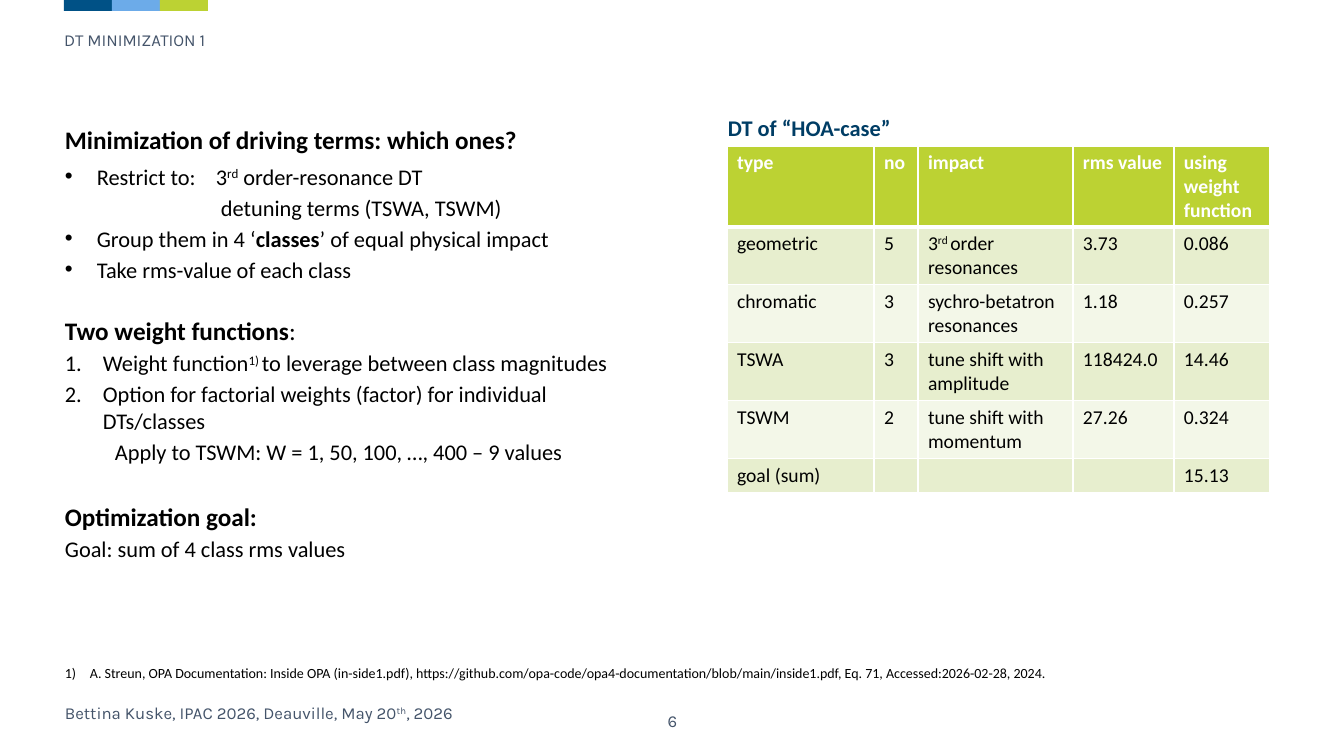
from lxml import etree
from pptx import Presentation
from pptx import util as u
from pptx.dml.color import RGBColor
from pptx.enum import shapes, text
from pptx.oxml.ns import qn

NAVY = RGBColor(0x00, 0x51, 0x86)
SKY = RGBColor(0x6C, 0xAB, 0xE9)
LIME = RGBColor(0xBC, 0xD2, 0x33)
SLATE = RGBColor(0x44, 0x54, 0x6A)
HEADING = RGBColor(0x00, 0x3D, 0x65)
BLACK = RGBColor(0x00, 0x00, 0x00)
WHITE = RGBColor(0xFF, 0xFF, 0xFF)
BAND_DARK = RGBColor(0xE7, 0xEE, 0xCE)
BAND_LIGHT = RGBColor(0xF3, 0xF7, 0xE8)

BULLET = ("buChar", {"char": "•"})
NUMBER = ("buAutoNum", {"type": "arabicPeriod"})
NOTE_NUMBER = ("buAutoNum", {"type": "arabicParenR"})

HEAD = dict(size=18, bold=True, after=3)
LINE = dict(size=16, after=3)
ITEM = dict(LINE, bullet=BULLET, margin=32, hang=32)
STEP = dict(LINE, bullet=NUMBER, margin=38, hang=38)
BODY = [
    ("Minimization of driving terms: which ones?", dict(HEAD, after=6)),
    ("Restrict to:\t3^rd^ order-resonance DT", dict(ITEM, tab=151)),
    ("detuning terms (TSWA, TSWM)", dict(LINE, margin=156)),
    ("Group them in 4 ‘*classes*’ of equal physical impact", ITEM),
    ("Take rms-value of each class", ITEM),
    ("*Two weight functions*:", dict(HEAD, bold=False, before=20)),
    ("Weight function^1) ^to leverage between class magnitudes", STEP),
    ("Option for factorial weights (factor) for individual DTs/classes", STEP),
    ("Apply to TSWM: W = 1, 50, 100, …, 400 – 9 values", dict(LINE, margin=50)),
    ("Optimization goal:", dict(HEAD, before=22.5)),
    ("Goal: sum of 4 class rms values", LINE),
]
CITATION = ("A. Streun, OPA Documentation: Inside OPA (in-side1.pdf), "
            "https://github.com/opa-code/opa4-documentation/blob/main/inside1.pdf, "
            "Eq. 71, Accessed:2026-02-28, 2024.")
TERMS = [
    ["type", "no", "impact", "rms value", "using\nweight function"],
    ["geometric", "5", "3^rd ^order resonances", "3.73", "0.086"],
    ["chromatic", "3", "sychro-betatron resonances", "1.18", "0.257"],
    ["TSWA", "3", "tune shift with amplitude", "118424.0", "14.46"],
    ["TSWM", "2", "tune shift with momentum", "27.26", "0.324"],
    ["goal (sum)", "", "", "", "15.13"],
]


def px(n):
    return u.Emu(round(n * 914400 / 100.8))


def add_xml(parent, tag, index=None, **attrs):
    el = etree.Element(qn("a:" + tag), attrs)
    parent.insert(len(parent) if index is None else index, el)
    return el


def write(p, content, size=16, color=BLACK, face="Calibri", bold=False, align=None,
          before=0, after=0, spacing=None, bullet=None, margin=0, hang=0, tab=None):
    """Fill a paragraph; *...* toggles bold and ^...^ marks a superscript."""
    p.space_before, p.space_after = u.Pt(before), u.Pt(after)
    p.line_spacing, p.alignment = spacing, align
    ppr = p._p.get_or_add_pPr()
    ppr.set("marL", str(px(margin)))
    ppr.set("indent", str(px(-hang)))
    if bullet:
        add_xml(ppr, "buFont", typeface="Arial" if bullet is BULLET else "+mj-lt")
        add_xml(ppr, bullet[0], **bullet[1])
    if tab:
        add_xml(add_xml(ppr, "tabLst"), "tab", pos=str(px(tab)), algn="l")
    for i, part in enumerate(content.split("*")):
        for j, piece in enumerate(part.split("^")):
            if not piece:
                continue
            r = p.add_run()
            r.text = piece
            r.font.size, r.font.name = u.Pt(size), face
            r.font.bold = bold != bool(i % 2)
            r.font.color.rgb = color
            if j % 2:
                r.font._element.set("baseline", "30000")


class Deck:
    def __init__(self, width, height):
        self.prs = Presentation()
        self.prs.slide_width, self.prs.slide_height = px(width), px(height)
        self.s = self.prs.slides.add_slide(self.prs.slide_layouts[5])

    def title(self, content, x, y, w, h, **style):
        sp = self.s.shapes.title
        sp.left, sp.top, sp.width, sp.height = map(px, (x, y, w, h))
        tf = sp.text_frame
        tf.margin_left = tf.margin_top = tf.margin_right = tf.margin_bottom = 0
        tf.vertical_anchor = text.MSO_ANCHOR.TOP
        tf.auto_size = text.MSO_AUTO_SIZE.NONE
        tf.word_wrap = True
        write(tf.paragraphs[0], content, align=text.PP_ALIGN.LEFT, **style)

    def rect(self, x, y, w, h, fill):
        sp = self.s.shapes.add_shape(shapes.MSO_SHAPE.RECTANGLE, *map(px, (x, y, w, h)))
        sp.shadow.inherit = False
        sp.fill.solid()
        sp.fill.fore_color.rgb = fill
        sp.line.fill.background()

    def text(self, lines, x, y, w, h, anchor=text.MSO_ANCHOR.TOP, inset=5):
        """Add a text box; lines holds (content, style) pairs."""
        tf = self.s.shapes.add_textbox(*map(px, (x, y, w, h))).text_frame
        tf.word_wrap = True
        tf.vertical_anchor = anchor
        tf.margin_top = tf.margin_bottom = px(inset)
        for i, (content, style) in enumerate(lines):
            write(tf.add_paragraph() if i else tf.paragraphs[0], content, **style)

    def table(self, rows, x, y, widths, heights):
        frame = self.s.shapes.add_table(len(rows), len(widths), px(x), px(y),
                                        px(sum(widths)), px(sum(heights)))
        for col, w in zip(frame.table.columns, widths):
            col.width = px(w)
        for row, h in zip(frame.table.rows, heights):
            row.height = px(h)
        for i, row in enumerate(rows):
            fill = BAND_DARK if i % 2 else BAND_LIGHT
            for j, content in enumerate(row):
                self.cell(frame.table.cell(i, j), content, LIME if i == 0 else fill,
                          header=i == 0, under_header=i == 1)

    def cell(self, cell, content, fill, header, under_header):
        cell.fill.solid()
        cell.fill.fore_color.rgb = fill
        thick = {"lnB": header, "lnT": under_header}
        for k, side in enumerate(("lnL", "lnR", "lnT", "lnB")):
            width = u.Pt(3 if thick.get(side) else 1)
            ln = add_xml(cell._tc.get_or_add_tcPr(), side, k, w=str(width))
            add_xml(add_xml(ln, "solidFill"), "srgbClr", val=str(WHITE))
        tf = cell.text_frame
        for k, line in enumerate(content.split("\n")):
            p = tf.add_paragraph() if k else tf.paragraphs[0]
            write(p, line, size=14, bold=header, color=WHITE if header else BLACK)
        if not content:
            tf.paragraphs[0].font.size = u.Pt(14)


def main():
    deck = Deck(1344, 756)
    karla = dict(size=12, face="Karla", color=SLATE)
    for i, color in enumerate((NAVY, SKY, LIME)):
        deck.rect(64 + 48 * i, 0, 48, 11, color)
    deck.title("DT MINIMIZATION 1", 64, 32, 165, 25, spacing=0.9, **karla)
    deck.text([("6", dict(karla, align=text.PP_ALIGN.CENTER))], 626, 701, 93, 40,
              anchor=text.MSO_ANCHOR.MIDDLE)
    deck.text([("Bettina Kuske, IPAC 2026, Deauville, May 20^th^, 2026", karla)],
              55, 703, 454, 40, inset=0)
    deck.table(TERMS, 727, 146, (147, 44, 155, 101, 96), (80, 58, 58, 58, 58, 34))
    deck.text(BODY, 55, 119, 587, 484)
    deck.text([(CITATION, dict(size=10, bullet=NOTE_NUMBER, margin=25, hang=25))],
              55, 660, 1020, 27)
    deck.text([("DT of “HOA-case”", dict(bold=True, color=HEADING))], 718, 109, 547, 37)
    deck.prs.save("out.pptx")


if __name__ == "__main__":
    main()
